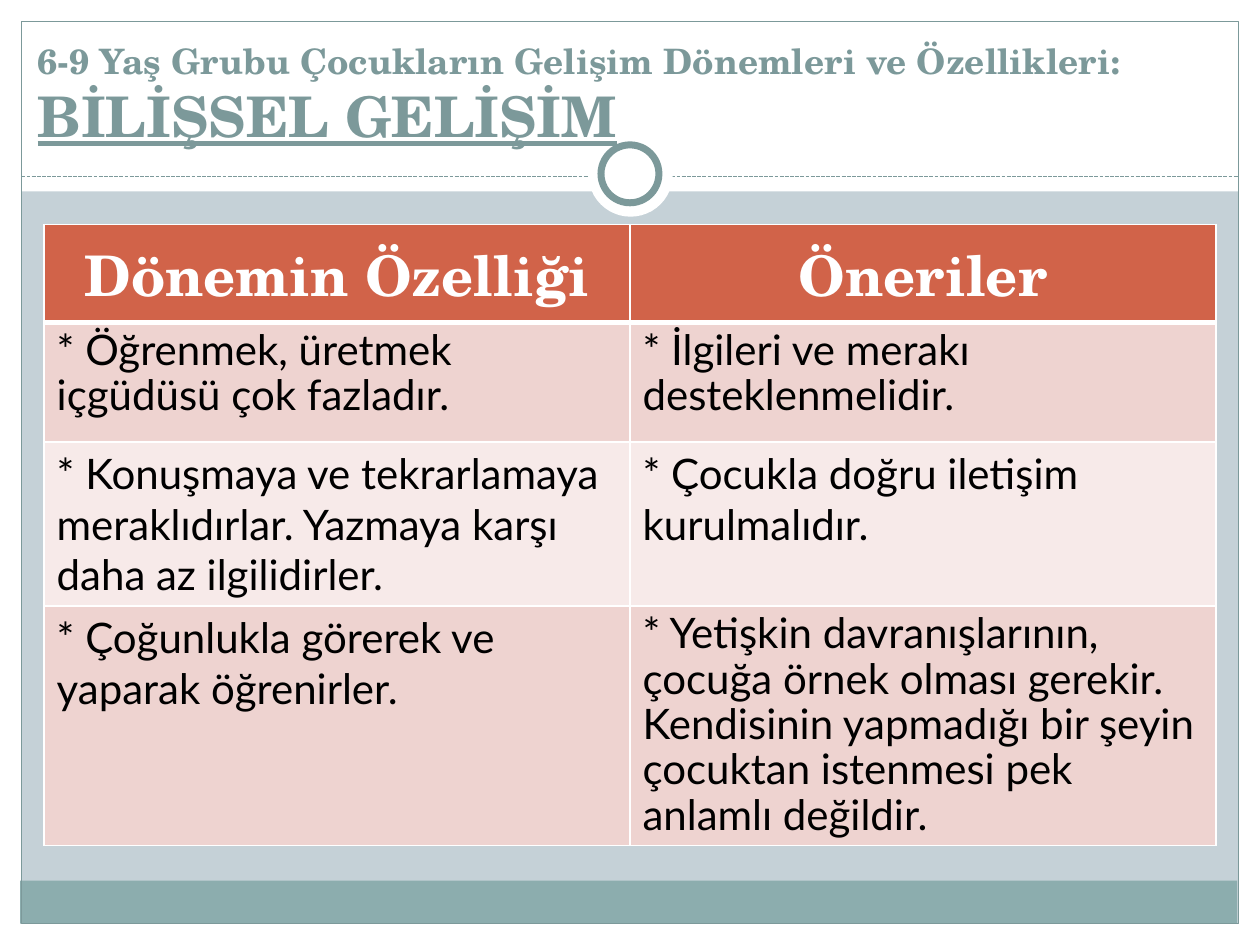
from dataclasses import dataclass
from typing import Optional

from lxml.etree import SubElement
from pptx import Presentation
from pptx.dml.color import RGBColor
from pptx.enum.dml import MSO_LINE
from pptx.enum.shapes import MSO_CONNECTOR, MSO_SHAPE
from pptx.enum.text import MSO_ANCHOR, PP_ALIGN
from pptx.oxml.ns import qn
from pptx.util import Inches, Pt


@dataclass(frozen=True)
class Theme:
    back: str = "C5D1D7"
    white: str = "FFFFFF"
    black: str = "000000"
    slate: str = "7C999A"
    teal: str = "8CADAE"
    rust: str = "D16349"
    bands: tuple = ("EED3D0", "F7EAE9")
    serif: str = "TeX Gyre Schola"
    sans: str = "Lato"
    small: int = 20
    body: int = 24
    large: int = 32


@dataclass(frozen=True)
class Panel:
    left: float
    top: float
    width: float
    height: float
    fill: Optional[str] = None
    line: Optional[str] = None
    weight: float = 0.75
    kind: MSO_SHAPE = MSO_SHAPE.RECTANGLE


@dataclass(frozen=True)
class Style:
    font: str
    size: int
    color: str
    bold: bool = False
    under: bool = False


@dataclass(frozen=True)
class Entry:
    text: str
    space: float = 1.0


THEME = Theme()
HEAD = Style(THEME.serif, THEME.large, THEME.white, bold=True)
BODY = Style(THEME.sans, THEME.body, THEME.black)
LEAD = Style(THEME.serif, THEME.small, THEME.slate, bold=True)
TOPIC = Style(THEME.serif, THEME.large, THEME.slate, bold=True, under=True)

PANELS = [
    Panel(0, 7.33, 10, 0.17, THEME.white),
    Panel(0, 0, 10, 1.52, THEME.white),
    Panel(0, 0, 0.17, 7.5, THEME.white),
    Panel(9.83, 0, 0.17, 7.5, THEME.white),
    Panel(0.16, 6.99, 9.66, 0.34, THEME.teal),
    Panel(0.17, 0.17, 9.66, 7.16, line=THEME.slate),
]
RINGS = [
    Panel(4.67, 1.05, 0.67, 0.67, THEME.white, kind=MSO_SHAPE.OVAL),
    Panel(4.77, 1.15, 0.46, 0.46, THEME.white, THEME.slate, 4, MSO_SHAPE.OVAL),
]
HEIGHTS = [0.78, 0.95, 1.3, 1.9]
ROWS = [
    (Entry("Dönemin Özelliği"), Entry("Öneriler")),
    (Entry("* Öğrenmek, üretmek içgüdüsü çok fazladır.", 0.9),
     Entry("* İlgileri ve merakı desteklenmelidir.", 0.9)),
    (Entry("* Konuşmaya ve tekrarlamaya meraklıdırlar. "
           "Yazmaya karşı daha az ilgilidirler."),
     Entry("* Çocukla doğru iletişim kurulmalıdır.")),
    (Entry("* Çoğunlukla görerek ve yaparak öğrenirler."),
     Entry("* Yetişkin davranışlarının, çocuğa örnek olması gerekir. "
           "Kendisinin yapmadığı bir şeyin çocuktan istenmesi pek "
           "anlamlı değildir.", 0.9)),
]


def rgb(color: str) -> RGBColor:
    return RGBColor.from_string(color)


def paint(part, color: str) -> None:
    part.fill.solid()
    part.fill.fore_color.rgb = rgb(color)


def add_panel(slide, panel: Panel) -> None:
    shape = slide.shapes.add_shape(
        panel.kind, Inches(panel.left), Inches(panel.top),
        Inches(panel.width), Inches(panel.height))
    shape.shadow.inherit = False
    if panel.fill:
        paint(shape, panel.fill)
    else:
        shape.fill.background()
    if panel.line:
        shape.line.color.rgb = rgb(panel.line)
        shape.line.width = Pt(panel.weight)
    else:
        shape.line.fill.background()


def add_rule(slide) -> None:
    rule = slide.shapes.add_connector(
        MSO_CONNECTOR.STRAIGHT, Inches(0.17), Inches(1.4),
        Inches(9.83), Inches(1.4))
    rule.line.color.rgb = rgb(THEME.slate)
    rule.line.width = Pt(0.75)
    rule.line.dash_style = MSO_LINE.SQUARE_DOT
    SubElement(rule.element.spPr, qn("a:effectLst"))


def add_run(para, text: str, style: Style) -> None:
    run = para.add_run()
    run.text = text
    font = run.font
    font.name, font.size = style.font, Pt(style.size)
    font.bold, font.underline = style.bold, style.under
    font.color.rgb = rgb(style.color)


def add_title(slide) -> None:
    box = slide.shapes.add_textbox(
        Inches(0.2), Inches(0.05), Inches(9.8), Inches(1.18))
    frame = box.text_frame
    frame.word_wrap = True
    frame.vertical_anchor = MSO_ANCHOR.BOTTOM
    para = frame.paragraphs[0]
    add_run(para, "6-9 Yaş Grubu Çocukların Gelişim Dönemleri ve Özellikleri:",
            LEAD)
    para.add_line_break()
    add_run(para, "BİLİŞSEL GELİŞİM", TOPIC)


def add_edges(cell, below: float) -> None:
    """Draw white cell borders, with the given weight below."""
    props = cell._tc.get_or_add_tcPr()
    for spot, (side, weight) in enumerate(
            [("L", 1), ("R", 1), ("T", 1), ("B", below)]):
        edge = SubElement(props, qn(f"a:ln{side}"), w=str(Pt(weight)))
        fill = SubElement(edge, qn("a:solidFill"))
        SubElement(fill, qn("a:srgbClr"), val=THEME.white)
        props.insert(spot, edge)


def add_grid(slide) -> None:
    grid = slide.shapes.add_table(
        len(ROWS), 2, Inches(0.35), Inches(1.78),
        Inches(9.3), Inches(sum(HEIGHTS))).table
    for col in grid.columns:
        col.width = Inches(4.65)
    for i, (height, row) in enumerate(zip(HEIGHTS, ROWS)):
        grid.rows[i].height = Inches(height)
        head = i == 0
        for j, entry in enumerate(row):
            cell = grid.cell(i, j)
            paint(cell, THEME.rust if head else THEME.bands[(i - 1) % 2])
            add_edges(cell, 3 if head else 1)
            para = cell.text_frame.paragraphs[0]
            para.alignment = PP_ALIGN.CENTER if head else PP_ALIGN.LEFT
            para.line_spacing = entry.space
            add_run(para, entry.text, HEAD if head else BODY)


def main() -> None:
    deck = Presentation()
    deck.slide_width, deck.slide_height = Inches(10), Inches(7.5)
    slide = deck.slides.add_slide(deck.slide_layouts[6])
    paint(slide.background, THEME.back)
    for panel in PANELS:
        add_panel(slide, panel)
    add_rule(slide)
    for ring in RINGS:
        add_panel(slide, ring)
    add_title(slide)
    add_grid(slide)
    deck.save("out.pptx")


if __name__ == "__main__":
    main()
